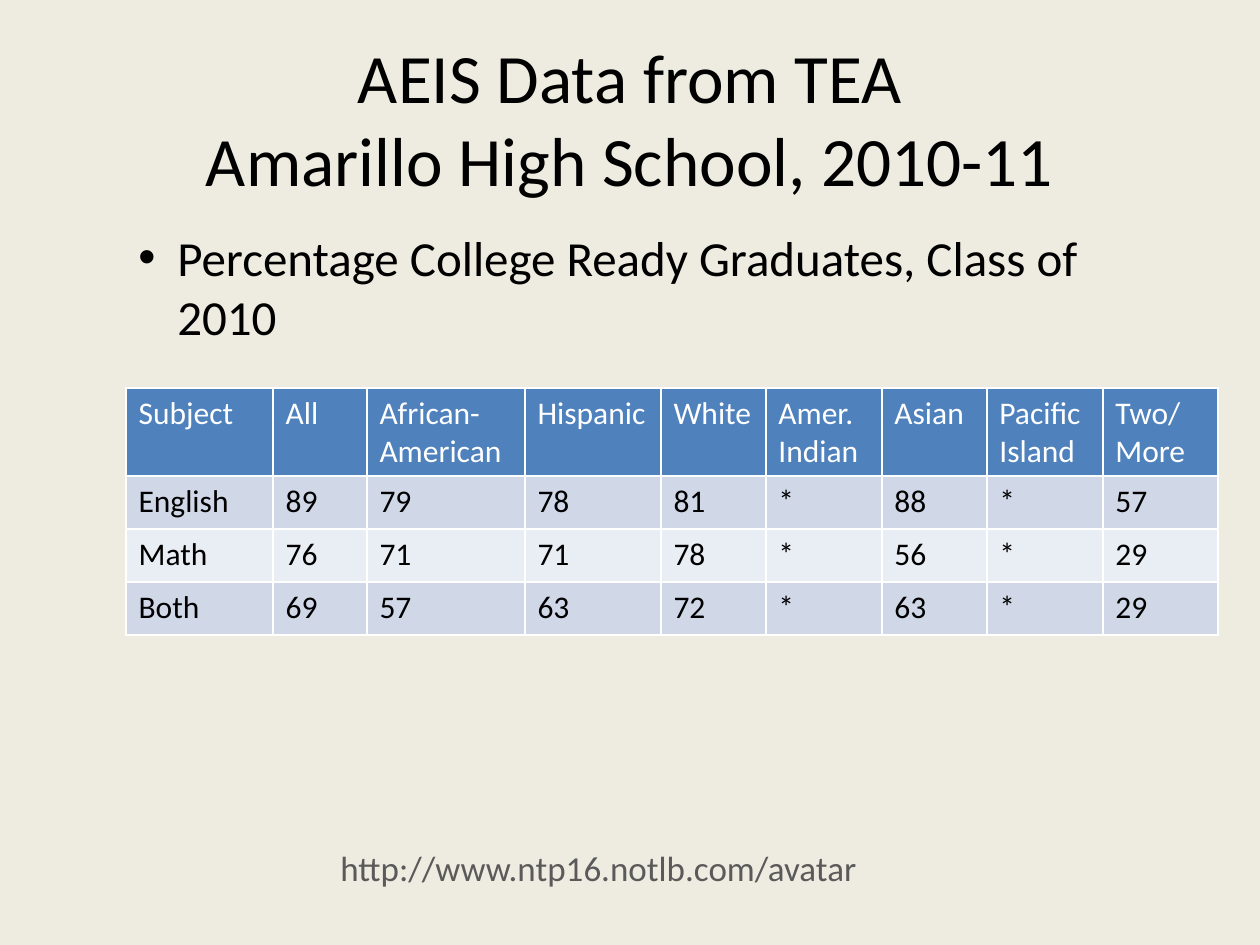
from lxml.etree import SubElement as Sub
from pptx import Presentation
from pptx.dml.color import RGBColor as RGB
from pptx.enum.text import MSO_ANCHOR as Anchor, PP_ALIGN as Align
from pptx.oxml.ns import qn
from pptx.util import Pt

PX = 914400 // 126
FONT = "Calibri"
CREAM, BLACK, WHITE = RGB(0xEE, 0xEC, 0xE1), RGB(0, 0, 0), RGB(255, 255, 255)
GRAY, BLUE = RGB(0x5A, 0x5A, 0x5A), RGB(0x4F, 0x81, 0xBD)
BANDS = RGB(0xE9, 0xED, 0xF4), RGB(0xD0, 0xD8, 0xE8)

TITLE = "AEIS Data from TEA\vAmarillo High School, 2010-11"
POINT = "Percentage College Ready Graduates, Class of 2010"
LINK = "http://www.ntp16.notlb.com/avatar"
ROWS = [
    ["Subject", "All", "African-\nAmerican", "Hispanic", "White",
     "Amer.\nIndian", "Asian", "Pacific\nIsland", "Two/\nMore"],
    ["English", "89", "79", "78", "81", "*", "88", "*", "57"],
    ["Math", "76", "71", "71", "78", "*", "56", "*", "29"],
    ["Both", "69", "57", "63", "72", "*", "63", "*", "29"],
]
WIDTHS = [147, 94, 158, 136, 105, 116, 105, 116, 115]
HEIGHTS = [77, 53, 53, 53]


def style(frame, size, color):
    for para in frame.paragraphs:
        for run in para.runs:
            font = run.font
            font.name, font.size, font.bold = FONT, Pt(size), False
            font.color.rgb = color


def add_text(slide, box, text, size, color, align):
    frame = slide.shapes.add_textbox(*(n * PX for n in box)).text_frame
    frame.word_wrap = True
    frame.text = text
    frame.paragraphs[0].alignment = align
    style(frame, size, color)
    return frame


def add_gap(para):
    """Put 20% of a line before the paragraph."""
    props = para._p.get_or_add_pPr()
    Sub(Sub(props, qn("a:spcBef")), qn("a:spcPct"), val="20000")
    return props


def add_bullet(para, left, hang):
    props = add_gap(para)
    props.set("marL", str(left * PX))
    props.set("indent", str(-hang * PX))
    Sub(props, qn("a:buFont"), typeface="Arial")
    Sub(props, qn("a:buChar"), char="•")


def add_grid(slide, left, top):
    grid = slide.shapes.add_table(
        len(ROWS), len(WIDTHS), left * PX, top * PX,
        sum(WIDTHS) * PX, sum(HEIGHTS) * PX).table
    for col, width in zip(grid.columns, WIDTHS):
        col.width = width * PX
    for r, (row, height) in enumerate(zip(ROWS, HEIGHTS)):
        grid.rows[r].height = height * PX
        for c, text in enumerate(row):
            cell = grid.cell(r, c)
            cell.text = text
            cell.fill.solid()
            cell.fill.fore_color.rgb = BANDS[r % 2] if r else BLUE
            style(cell.text_frame, 18, BLACK if r else WHITE)


def main():
    deck = Presentation()
    deck.slide_width, deck.slide_height = 1260 * PX, 945 * PX
    slide = deck.slides.add_slide(deck.slide_layouts[6])
    slide.background.fill.solid()
    slide.background.fill.fore_color.rgb = CREAM

    link = add_text(slide, (247, 840, 703, 55), LINK, 20, GRAY, Align.CENTER)
    add_gap(link.paragraphs[0])
    title = add_text(slide, (63, 38, 1134, 158), TITLE, 39.6, BLACK, Align.CENTER)
    title.vertical_anchor = Anchor.MIDDLE
    body = add_text(slide, (63, 221, 1134, 624), POINT, 28, BLACK, Align.LEFT)
    add_bullet(body.paragraphs[0], 102, 39)
    add_grid(slide, 126, 388)
    deck.save("out.pptx")


if __name__ == "__main__":
    main()
